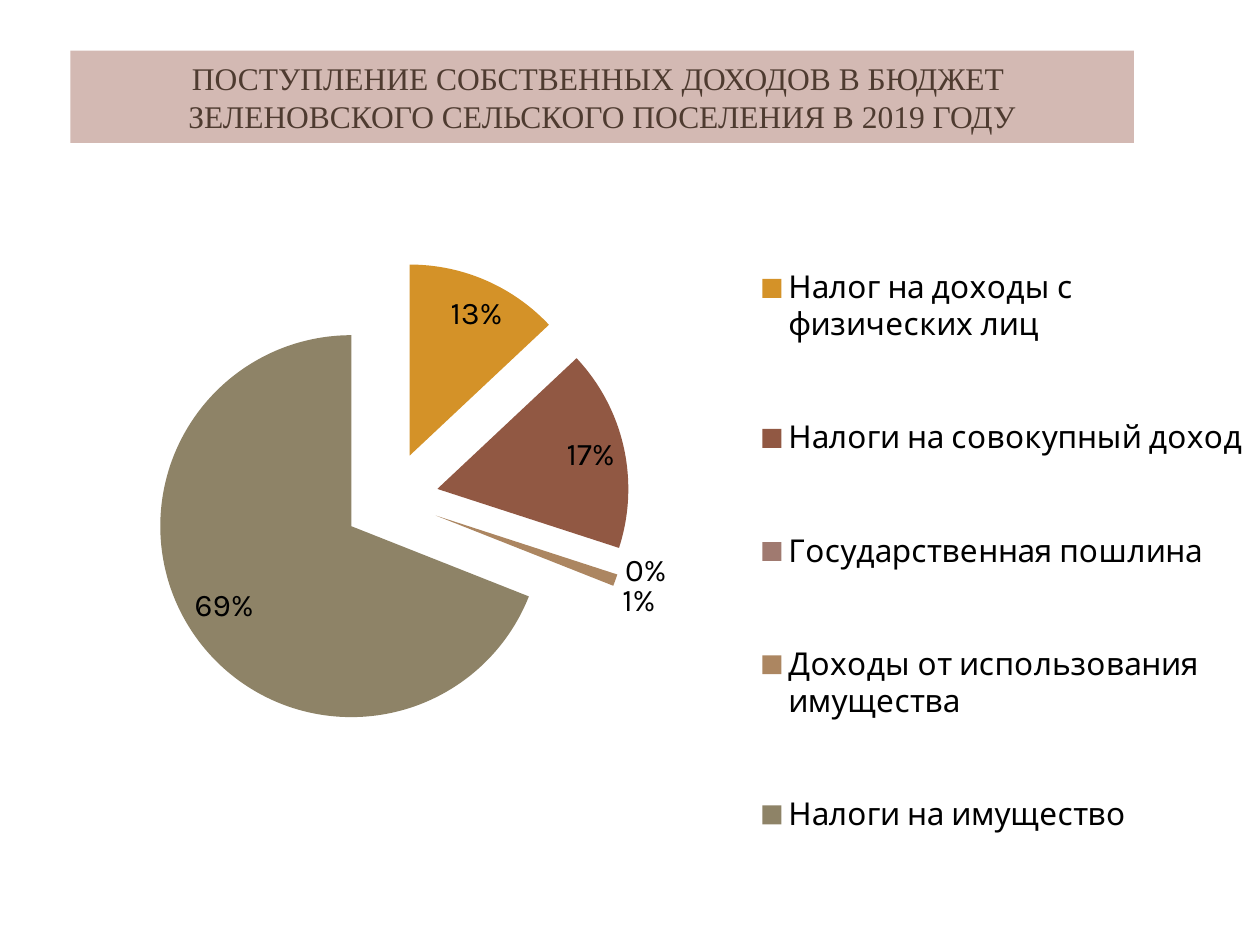
from lxml import etree
from pptx import Presentation
from pptx.chart.data import CategoryChartData
from pptx.dml.color import RGBColor
from pptx.enum.chart import XL_CHART_TYPE, XL_LABEL_POSITION, XL_LEGEND_POSITION
from pptx.enum.shapes import MSO_SHAPE
from pptx.enum.text import MSO_ANCHOR, PP_ALIGN
from pptx.oxml.ns import qn
from pptx.util import Cm, Pt

PIE = XL_CHART_TYPE.PIE
BEST_FIT = XL_LABEL_POSITION.BEST_FIT
LEGEND_RIGHT = XL_LEGEND_POSITION.RIGHT
RECTANGLE = MSO_SHAPE.RECTANGLE
MIDDLE = MSO_ANCHOR.MIDDLE
CENTER = PP_ALIGN.CENTER

TITLE = ("ПОСТУПЛЕНИЕ СОБСТВЕННЫХ ДОХОДОВ В БЮДЖЕТ \v"
         "ЗЕЛЕНОВСКОГО СЕЛЬСКОГО ПОСЕЛЕНИЯ В 2019 ГОДУ")
ZERO_LABEL = "0%"
INCOME = [
    ("Налог на доходы с физических лиц", 13, "orange"),
    ("Налоги на совокупный доход", 17, "brown"),
    ("Государственная пошлина", 0, "rose"),
    ("Доходы от использования имущества", 1, "tan"),
    ("Налоги на имущество", 69, "olive"),
]
COLORS = {
    "banner": "D3B9B3", "title": "4E3B30", "text": "000000",
    "orange": "D49228", "brown": "915843", "rose": "A07A70",
    "tan": "AC8661", "olive": "8E8367",
}
EXPLOSION = 25
PLOT_AREA = {"x": 0.05, "y": 0.13, "w": 0.41, "h": 0.64}
LEGEND_AREA = {"x": 0.58, "y": 0.04, "w": 0.42, "h": 0.96}


def color(name):
    return RGBColor.from_string(COLORS[name])


def style_font(font, name, size, tint):
    font.name = name
    font.size = Pt(size)
    font.color.rgb = color(tint)


def add_text(page, text, *, left, top, width, height, font, tint,
             size=18, fill=None):
    box = page.shapes.add_shape(RECTANGLE, left, top, width, height)
    box.shadow.inherit = False
    box.line.fill.background()
    if fill:
        box.fill.solid()
        box.fill.fore_color.rgb = color(fill)
    else:
        box.fill.background()
    frame = box.text_frame
    frame.word_wrap = True
    frame.vertical_anchor = MIDDLE
    para = frame.paragraphs[0]
    para.text = text
    para.alignment = CENTER
    for span in para.runs:
        style_font(span.font, font, size, tint)


def set_layout(parent, index, area, inner=False):
    for old in parent.findall(qn("c:layout")):
        parent.remove(old)
    layout = etree.Element(qn("c:layout"))
    parent.insert(index, layout)
    manual = etree.SubElement(layout, qn("c:manualLayout"))
    settings = [("layoutTarget", "inner")] if inner else []
    settings += [("xMode", "edge"), ("yMode", "edge")]
    settings += [(key, str(value)) for key, value in area.items()]
    for tag, value in settings:
        etree.SubElement(manual, qn("c:" + tag), val=value)


def add_income_pie(page):
    data = CategoryChartData()
    data.categories = [name for name, _, _ in INCOME]
    data.add_series("Series 1", [value for _, value, _ in INCOME])
    chart = page.shapes.add_chart(
        PIE, Cm(1.88), Cm(3.3), Cm(23.52), Cm(15.04), data).chart
    chart.has_title = False
    style_font(chart.font, "Karla", 18, "text")

    chart.has_legend = True
    chart.legend.position = LEGEND_RIGHT
    chart.legend.include_in_layout = False
    set_layout(chart.legend._element, 1, LEGEND_AREA)
    set_layout(chart._chartSpace.chart.plotArea, 0, PLOT_AREA, inner=True)

    plot = chart.plots[0]
    plot.vary_by_categories = True
    series = plot.series[0]
    for index, (_, _, tint) in enumerate(INCOME):
        fill = series.points[index].format.fill
        fill.solid()
        fill.fore_color.rgb = color(tint)

    node = series._element
    anchors = [node.find(qn("c:dPt"))]
    anchors += [point.find(qn("c:spPr")) for point in node.findall(qn("c:dPt"))]
    for anchor in anchors:
        anchor.addprevious(etree.Element(qn("c:explosion"), val=str(EXPLOSION)))

    labels = series.data_labels
    labels.show_value = False
    labels.show_percentage = True
    labels.number_format = "0%"
    labels.number_format_is_linked = False
    labels.position = BEST_FIT
    style_font(labels.font, "Karla", 18, "text")


def main():
    deck = Presentation()
    deck.slide_width, deck.slide_height = Cm(25.4), Cm(19.05)
    page = deck.slides.add_slide(deck.slide_layouts[6])
    add_text(page, TITLE, left=Cm(1.42), top=Cm(1.02), width=Cm(21.44),
             height=Cm(1.86), fill="banner", font="Times New Roman", tint="title")
    add_income_pie(page)
    add_text(page, ZERO_LABEL, left=Cm(12.02), top=Cm(11), width=Cm(2),
             height=Cm(0.94), font="Karla", tint="text")
    deck.save("out.pptx")


if __name__ == "__main__":
    main()
